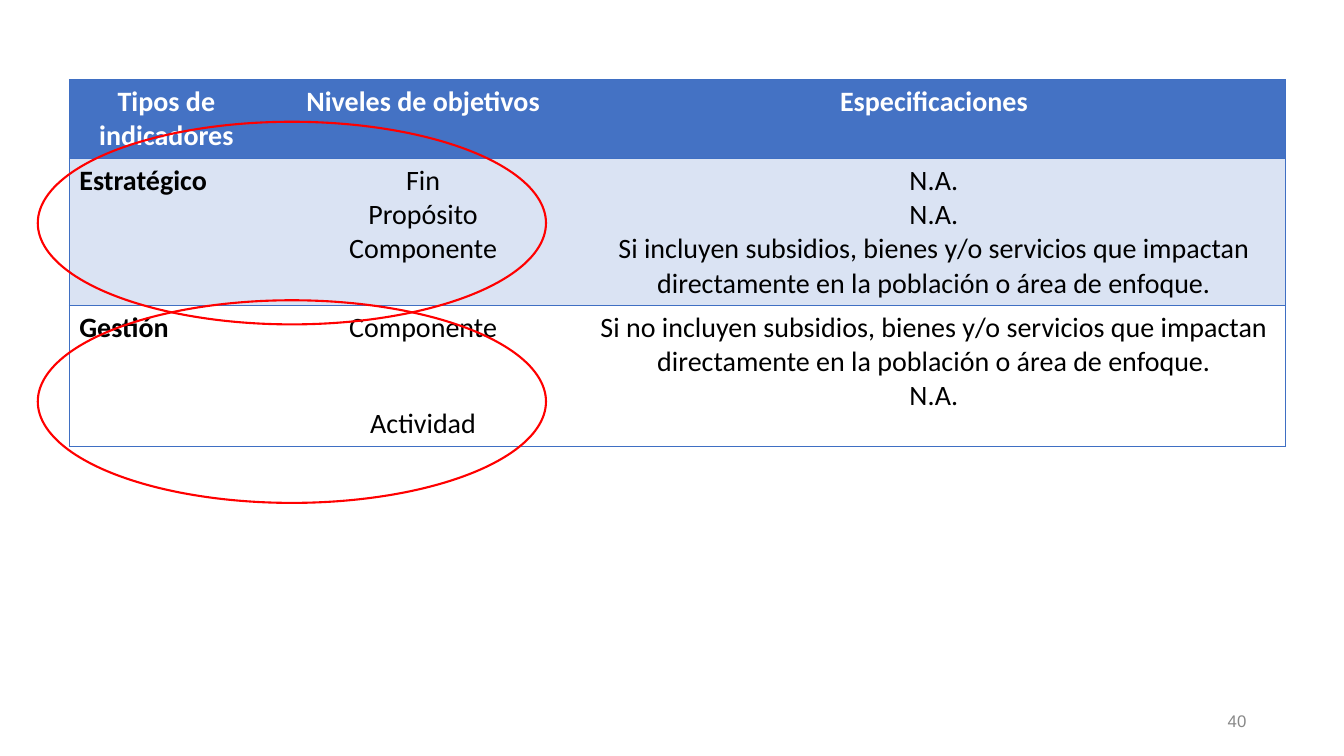
from dataclasses import dataclass

from lxml import etree
from pptx import Presentation
from pptx import util as u
from pptx.dml.color import RGBColor
from pptx.enum import shapes, text
from pptx.oxml.ns import qn

PX = 9525  # EMU in one px, 96 px to the inch
LEFT, CENTER, RIGHT = text.PP_ALIGN.LEFT, text.PP_ALIGN.CENTER, text.PP_ALIGN.RIGHT
NO_STYLE = "{2D5ABB26-0587-4C30-8999-92F81FD0307C}"


@dataclass
class Theme:
    header: str = "4472C4"
    band: str = "DAE3F3"
    rule: str = "3F6FC3"
    ring: str = "FF0000"
    light: str = "FFFFFF"
    dark: str = "000000"
    muted: str = "888888"
    body_font: str = "Calibri"
    number_font: str = "Arial"
    body_size: int = 20
    number_size: int = 12
    rule_width: float = 0.75
    ring_width: float = 1.5


def px(n):
    return u.Emu(n * PX)


def write(p, words, *, font, size, color, bold=False, align=LEFT, before=0):
    p.alignment = align
    if before:
        p.space_before = u.Pt(before)
    r = p.add_run()
    r.text = words
    r.font.name, r.font.size, r.font.bold = font, u.Pt(size), bold
    r.font.color.rgb = RGBColor.from_string(color)


class SlideBuilder:
    def __init__(self, prs, theme):
        self.theme = theme
        self.s = prs.slides.add_slide(prs.slide_layouts[6])

    def border(self, cell, side, color):
        ln = etree.SubElement(cell._tc.get_or_add_tcPr(), qn(f"a:ln{side}"),
                              w=str(u.Pt(self.theme.rule_width)))
        if color is None:
            etree.SubElement(ln, qn("a:noFill"))
        else:
            fill = etree.SubElement(ln, qn("a:solidFill"))
            etree.SubElement(fill, qn("a:srgbClr"), val=color)

    def table(self, x, y, widths, heights, rows, fills):
        t = self.theme
        frame = self.s.shapes.add_table(len(rows), len(widths), px(x), px(y),
                                        px(sum(widths)), px(sum(heights)))
        table = frame.table
        table.first_row = table.horz_banding = False
        table._tbl.tblPr.find(qn("a:tableStyleId")).text = NO_STYLE
        for column, width in zip(table.columns, widths):
            column.width = px(width)
        for i, row in enumerate(rows):
            table.rows[i].height = px(heights[i])
            for j, lines in enumerate(row):
                cell = table.cell(i, j)
                # Rules around the table and between rows, none between columns
                outer = {"L": j == 0, "R": j == len(widths) - 1, "T": True, "B": True}
                for side, ruled in outer.items():
                    self.border(cell, side, t.rule if ruled else None)
                if fills[i]:
                    cell.fill.solid()
                    cell.fill.fore_color.rgb = RGBColor.from_string(fills[i])
                else:
                    cell.fill.background()
                tf = cell.text_frame
                for k, (words, before) in enumerate(lines):
                    p = tf.add_paragraph() if k else tf.paragraphs[0]
                    write(p, words, font=t.body_font, size=t.body_size,
                          color=t.dark if i else t.light, bold=i == 0 or j == 0,
                          align=LEFT if i and j == 0 else CENTER, before=before)

    def ring(self, x, y, w, h):
        sp = self.s.shapes.add_shape(shapes.MSO_SHAPE.OVAL, px(x), px(y), px(w), px(h))
        sp.shadow.inherit = False
        sp.fill.background()
        sp.line.color.rgb = RGBColor.from_string(self.theme.ring)
        sp.line.width = u.Pt(self.theme.ring_width)

    def page_number(self, x, y, w, h, number):
        t = self.theme
        tf = self.s.shapes.add_textbox(px(x), px(y), px(w), px(h)).text_frame
        tf.margin_left = tf.margin_right = tf.margin_top = tf.margin_bottom = px(5)
        tf.vertical_anchor = text.MSO_ANCHOR.MIDDLE
        tf.word_wrap = False
        write(tf.paragraphs[0], number, font=t.number_font, size=t.number_size,
              color=t.muted, align=RIGHT)


def plain(*lines):
    return [(line, 0) for line in lines]


def main():
    prs = Presentation()
    prs.slide_width, prs.slide_height = px(1280), px(720)
    theme = Theme()
    slide = SlideBuilder(prs, theme)

    slide.page_number(1164, 672, 28, 28, "40")

    # Indicator types by level of objective
    impact = "incluyen subsidios, bienes y/o servicios que impactan " \
             "directamente en la población o área de enfoque."
    rows = [
        [plain("Tipos de indicadores"), plain("Niveles de objetivos"),
         plain("Especificaciones")],
        [plain("Estratégico"), plain("Fin", "Propósito", "Componente"),
         plain("N.A.", "N.A.", f"Si {impact}")],
        [plain("Gestión"), [("Componente", 0), ("Actividad", 44)],
         plain(f"Si no {impact}", "N.A.")],
    ]
    slide.table(66, 76, [185, 304, 669], [75, 140, 134], rows,
                [theme.header, theme.band, None])

    # One ring around each indicator type
    for i in range(2):
        slide.ring(36, 116 + 170 * i, 484, 193)

    prs.save("out.pptx")


if __name__ == "__main__":
    main()
